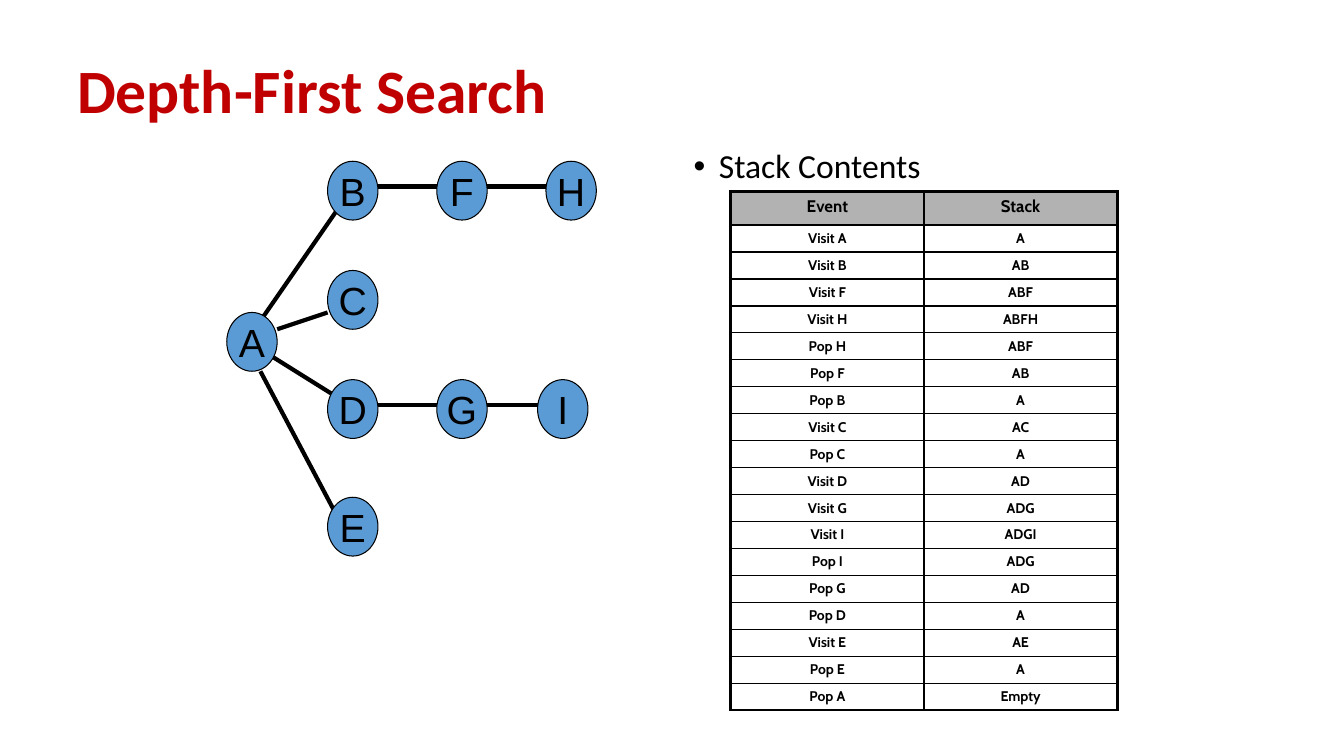
from lxml import etree
from pptx import Presentation
from pptx.dml.color import RGBColor
from pptx.enum.shapes import MSO_CONNECTOR, MSO_SHAPE
from pptx.enum.text import MSO_ANCHOR, PP_ALIGN
from pptx.oxml.ns import qn
from pptx.util import Emu, Pt

STRAIGHT = MSO_CONNECTOR.STRAIGHT
OVAL = MSO_SHAPE.OVAL
MIDDLE = MSO_ANCHOR.MIDDLE
CENTER = PP_ALIGN.CENTER

EMU_PER_PX = 7620  # 120 px to the inch
SLIDE_WIDTH, SLIDE_HEIGHT = 1600, 900

COLORS = {
    "title": "C00000",
    "ink": "000000",
    "node": "5B9BD5",
    "header": "B2B2B2",
}

TITLE_FONT = {"name": "Calibri", "size": Pt(44), "bold": True}
BODY_FONT = {"name": "Calibri", "size": Pt(24)}
NODE_FONT = {"name": "Arial", "size": Pt(28)}
HEADER_FONT = {"name": "Cabin", "size": Pt(12), "bold": True}
CELL_FONT = {"name": "Cabin", "size": Pt(10), "bold": True}

TITLE_BOX = (80, 36, 1440, 150)
GRAPH_BOX = (270, 192, 440, 470)
BODY_BOX = (814, 172, 707, 594)
TABLE_BOX = (870, 228, 460, 616)

# Node corners and edge ends, measured from the corner of the graph box.
NODE_WIDTH, NODE_HEIGHT = 60, 70
NODES = {
    "A": (0, 180),
    "B": (120, 0),
    "C": (120, 130),
    "F": (250, 0),
    "H": (380, 0),
    "I": (370, 260),
    "G": (250, 260),
    "D": (120, 260),
    "E": (120, 400),
}
BRANCHES = [
    (40, 190, 130, 60),
    (60, 200, 120, 180),
    (50, 230, 130, 280),
    (40, 250, 130, 420),
]
ROW_EDGES = ["BF", "FH", "DG", "GI"]
ROW_EDGE_DROP = 30

HEADER_HEIGHT = 40
THIN, THICK = Pt(1), Pt(2.25)
STACK_ROWS = [
    ("Event", "Stack"),
    ("Visit A", "A"),
    ("Visit B", "AB"),
    ("Visit F", "ABF"),
    ("Visit H", "ABFH"),
    ("Pop H", "ABF"),
    ("Pop F", "AB"),
    ("Pop B", "A"),
    ("Visit C", "AC"),
    ("Pop C", "A"),
    ("Visit D", "AD"),
    ("Visit G", "ADG"),
    ("Visit I", "ADGI"),
    ("Pop I", "ADG"),
    ("Pop G", "AD"),
    ("Pop D", "A"),
    ("Visit E", "AE"),
    ("Pop E", "A"),
    ("Pop A", "Empty"),
]


def px(*lengths):
    return [Emu(length * EMU_PER_PX) for length in lengths]


def color(name):
    return RGBColor.from_string(COLORS[name])


def write(text_frame, text, font, ink="ink", **layout):
    """Put text in the first paragraph, which is returned."""
    paragraph = text_frame.paragraphs[0]
    for name, value in layout.items():
        setattr(paragraph, name, value)
    run = paragraph.add_run()
    run.text = text
    for name, value in font.items():
        setattr(run.font, name, value)
    run.font.color.rgb = color(ink)
    return paragraph


def add_title(slide, box):
    text_frame = slide.shapes.add_textbox(*px(*box)).text_frame
    text_frame.word_wrap = True
    text_frame.vertical_anchor = MIDDLE
    write(text_frame, "Depth-First Search", TITLE_FONT, "title", line_spacing=0.9)


def add_body(slide, box):
    text_frame = slide.shapes.add_textbox(*px(*box)).text_frame
    text_frame.word_wrap = True
    paragraph = write(text_frame, "Stack Contents", BODY_FONT,
                      line_spacing=0.9, space_before=Pt(10))
    properties = paragraph._p.get_or_add_pPr()
    indent, = px(30)
    properties.set("marL", str(indent))
    properties.set("indent", str(-indent))
    etree.SubElement(properties, qn("a:buFont"), typeface="Arial")
    etree.SubElement(properties, qn("a:buChar"), char="•")


def add_edges(slide, box):
    left, top = box[:2]
    edges = list(BRANCHES)
    for start, end in ROW_EDGES:
        x, y = NODES[start]
        level = y + ROW_EDGE_DROP
        edges.append((x + NODE_WIDTH, level, NODES[end][0], level))
    for x1, y1, x2, y2 in edges:
        ends = px(left + x1, top + y1, left + x2, top + y2)
        edge = slide.shapes.add_connector(STRAIGHT, *ends)
        edge.line.color.rgb = color("ink")
        edge.line.width = Pt(3)
        etree.SubElement(edge._element.spPr, qn("a:effectLst"))


def add_nodes(slide, box):
    left, top = box[:2]
    for letter, (x, y) in NODES.items():
        node = slide.shapes.add_shape(
            OVAL, *px(left + x, top + y, NODE_WIDTH, NODE_HEIGHT))
        node.shadow.inherit = False
        node.fill.solid()
        node.fill.fore_color.rgb = color("node")
        node.line.color.rgb = color("ink")
        node.line.width = Pt(0.75)
        node.text_frame.word_wrap = False
        node.text_frame.vertical_anchor = MIDDLE
        write(node.text_frame, letter, NODE_FONT, alignment=CENTER)


def set_borders(cell, widths):
    """Draw the left, right, top and bottom borders, in that order."""
    properties = cell._tc.get_or_add_tcPr()
    for side, width in zip("LRTB", widths):
        border = etree.SubElement(properties, qn(f"a:ln{side}"), w=str(width))
        fill = etree.SubElement(border, qn("a:solidFill"))
        etree.SubElement(fill, qn("a:srgbClr"), val=COLORS["ink"])


def add_stack_table(slide, box):
    last_row, last_column = len(STACK_ROWS) - 1, len(STACK_ROWS[0]) - 1
    table = slide.shapes.add_table(last_row + 1, last_column + 1, *px(*box)).table
    table.first_row = table.horz_banding = False
    row_height = (box[3] - HEADER_HEIGHT) // last_row
    for row_index, texts in enumerate(STACK_ROWS):
        is_header = row_index == 0
        height = HEADER_HEIGHT if is_header else row_height
        table.rows[row_index].height, = px(height)
        for column_index, text in enumerate(texts):
            cell = table.cell(row_index, column_index)
            on_outline = (column_index == 0, column_index == last_column,
                          is_header, row_index == last_row)
            set_borders(cell, [THICK if outer else THIN for outer in on_outline])
            if is_header:
                cell.fill.solid()
                cell.fill.fore_color.rgb = color("header")
            else:
                cell.fill.background()
            font = HEADER_FONT if is_header else CELL_FONT
            paragraph = write(cell.text_frame, text, font, alignment=CENTER)
            spacing = etree.SubElement(paragraph._p.get_or_add_pPr(), qn("a:spcBef"))
            etree.SubElement(spacing, qn("a:spcPct"), val="20000")


def build_search_slide(presentation):
    slide = presentation.slides.add_slide(presentation.slide_layouts[6])
    add_edges(slide, GRAPH_BOX)
    add_title(slide, TITLE_BOX)
    add_stack_table(slide, TABLE_BOX)
    add_body(slide, BODY_BOX)
    add_nodes(slide, GRAPH_BOX)


def main():
    presentation = Presentation()
    presentation.slide_width, presentation.slide_height = px(SLIDE_WIDTH, SLIDE_HEIGHT)
    build_search_slide(presentation)
    presentation.save("out.pptx")


if __name__ == "__main__":
    main()
